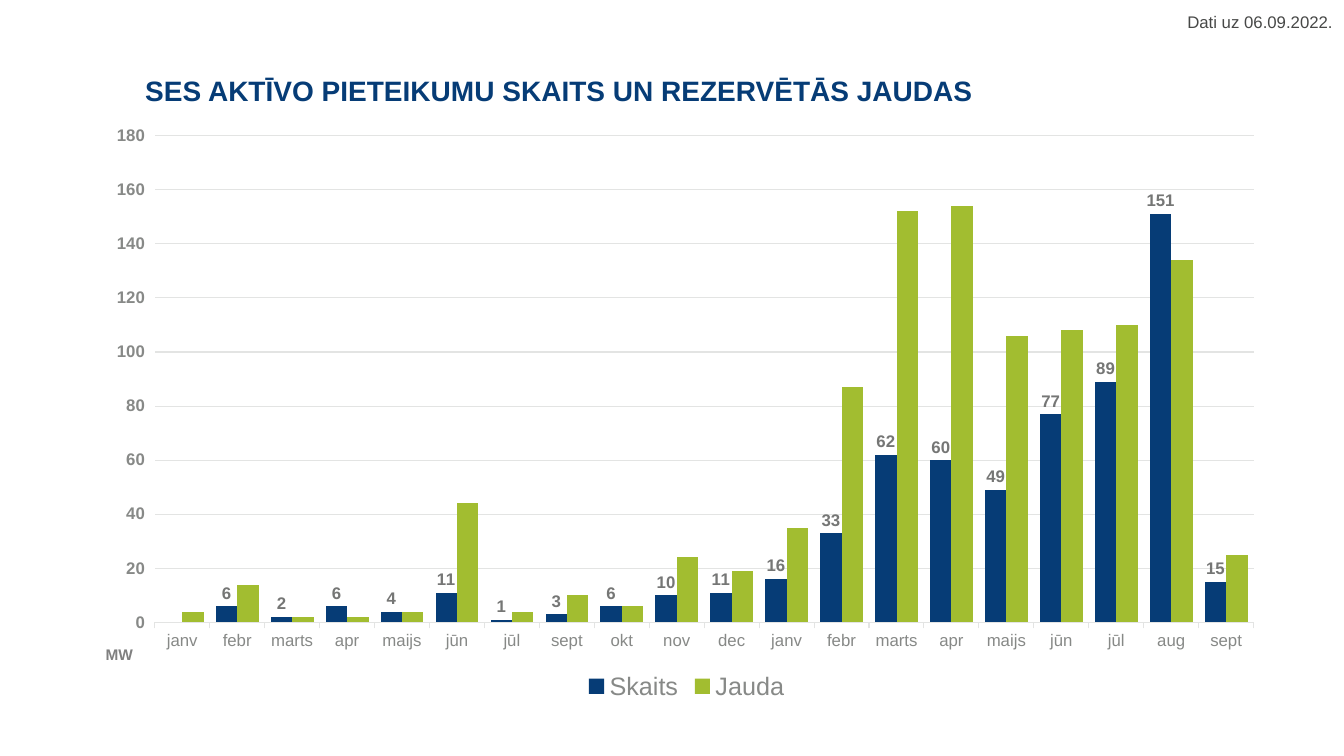
"""Build the slide on active solar applications and reserved capacity."""
from lxml import etree
from pptx import Presentation
from pptx.chart.data import CategoryChartData
from pptx.dml.color import RGBColor
from pptx.enum.chart import XL_CHART_TYPE, XL_LABEL_POSITION, XL_LEGEND_POSITION, XL_TICK_MARK
from pptx.enum.shapes import MSO_SHAPE
from pptx.enum.text import MSO_ANCHOR, MSO_AUTO_SIZE, PP_ALIGN
from pptx.oxml.ns import qn
from pptx.util import Pt

COLUMNS = XL_CHART_TYPE.COLUMN_CLUSTERED
OUTSIDE_END = XL_LABEL_POSITION.OUTSIDE_END
BOTTOM = XL_LEGEND_POSITION.BOTTOM
TICK_OUTSIDE = XL_TICK_MARK.OUTSIDE
RECTANGLE = MSO_SHAPE.RECTANGLE
MIDDLE, TOP = MSO_ANCHOR.MIDDLE, MSO_ANCHOR.TOP
FIT_SHAPE = MSO_AUTO_SIZE.SHAPE_TO_FIT_TEXT
LEFT, JUSTIFY = PP_ALIGN.LEFT, PP_ALIGN.JUSTIFY

NAVY, GREEN, WHITE = "063C76", "A2BD30", "FFFFFF"
DARK, AXIS_GREY, LABEL_GREY, UNIT_GREY, GRID = "474847", "878987", "757675", "808080", "E3E4E3"

MONTHS = ["janv", "febr", "marts", "apr", "maijs", "jūn", "jūl", "sept", "okt", "nov", "dec",
          "janv", "febr", "marts", "apr", "maijs", "jūn", "jūl", "aug", "sept"]
COUNTS = [None, 6, 2, 6, 4, 11, 1, 3, 6, 10, 11, 16, 33, 62, 60, 49, 77, 89, 151, 15]
CAPACITIES = [4, 14, 2, 2, 4, 44, 4, 10, 6, 24, 19, 35, 87, 152, 154, 106, 108, 110, 134, 25]
SERIES = [("Skaits", COUNTS, NAVY), ("Jauda", CAPACITIES, GREEN)]
PLOT_AREA = {"x": 0.05, "y": 0.04, "w": 0.93, "h": 0.82}


def color(hex_string):
    """Return the colour for a hex string."""
    return RGBColor.from_string(hex_string)


class SlideBuilder:
    """Hold the style and the current slide."""

    def __init__(self, slide, font_name):
        """Keep the slide and the name of its font."""
        self.slide = slide
        self.font_name = font_name

    def style_font(self, font, size, hex_string, bold=False):
        """Set name, size, colour and weight of a font."""
        font.name, font.size, font.bold = self.font_name, Pt(size), bold
        font.color.rgb = color(hex_string)

    def fill_text(self, shape, text, size, hex_string, bold=False, align=LEFT, anchor=TOP):
        """Put one formatted paragraph in a shape."""
        frame = shape.text_frame
        frame.text = text
        frame.word_wrap, frame.auto_size = True, FIT_SHAPE
        frame.vertical_anchor = anchor
        paragraph = frame.paragraphs[0]
        paragraph.alignment = align
        self.style_font(paragraph.runs[0].font, size, hex_string, bold)
        return paragraph

    def title(self, text, left, top, width, height):
        """Place and format the title."""
        shape = self.slide.shapes.title
        shape.left, shape.top, shape.width, shape.height = map(Pt, (left, top, width, height))
        self.fill_text(shape, text, 20, NAVY, bold=True, anchor=MIDDLE)

    def unit(self, text, left, top, width, height):
        """Add the unit of the value axis."""
        shape = self.slide.shapes.add_textbox(*map(Pt, (left, top, width, height)))
        paragraph = self.fill_text(shape, text, 11, UNIT_GREY, bold=True, align=JUSTIFY)
        paragraph.line_spacing = Pt(25)

    def date_note(self, text, left, top, width, height):
        """Add the date of the data on a white box."""
        shape = self.slide.shapes.add_shape(RECTANGLE, *map(Pt, (left, top, width, height)))
        shape.shadow.inherit = False
        shape.fill.solid()
        shape.fill.fore_color.rgb = color(WHITE)
        shape.line.fill.background()
        self.fill_text(shape, text, 12, DARK)
        shape.text_frame.word_wrap = False

    def style_line(self, line):
        """Make a chart line thin and pale."""
        line.color.rgb = color(GRID)
        line.width = Pt(0.75)

    def column_chart(self, categories, series_rows, left, top, width, height):
        """Add the clustered column chart."""
        data = CategoryChartData(number_format="0")
        data.categories = categories
        for name, values, _ in series_rows:
            data.add_series(name, values)
        frame = self.slide.shapes.add_chart(COLUMNS, *map(Pt, (left, top, width, height)), data)
        chart = frame.chart
        chart.has_title = False
        self.style_font(chart.font, 10, DARK)
        plot = chart.plots[0]
        plot.gap_width, plot.overlap, plot.vary_by_categories = 57, 0, False
        for series, (_, _, hex_string) in zip(plot.series, series_rows):
            series.format.fill.solid()
            series.format.fill.fore_color.rgb = color(hex_string)
        self.value_labels(plot.series[0])
        self.axes(chart)
        chart.has_legend = True
        chart.legend.position = BOTTOM
        chart.legend.include_in_layout = False
        self.style_font(chart.legend.font, 18, AXIS_GREY)
        self.place_plot(chart)

    def value_labels(self, series):
        """Show bold values above the columns of a series."""
        labels = series.data_labels
        labels.show_value = True
        labels.position = OUTSIDE_END
        labels.number_format, labels.number_format_is_linked = "0", False
        self.style_font(labels.font, 12, LABEL_GREY, bold=True)

    def axes(self, chart):
        """Format both axes and the gridlines."""
        months, values = chart.category_axis, chart.value_axis
        for axis, bold in ((months, False), (values, True)):
            axis.major_tick_mark = TICK_OUTSIDE
            self.style_font(axis.tick_labels.font, 12, AXIS_GREY, bold)
        self.style_line(months.format.line)
        values.format.line.fill.background()
        values.minimum_scale, values.maximum_scale, values.major_unit = 0, 180, 20
        values.has_major_gridlines = True
        self.style_line(values.major_gridlines.format.line)
        values.tick_labels.number_format = "0"
        values.tick_labels.number_format_is_linked = False

    def place_plot(self, chart):
        """Fix the inner plot area as fractions of the chart."""
        plot_area = chart.element.find(".//" + qn("c:plotArea"))
        layout = plot_area.find(qn("c:layout"))
        if layout is None:
            layout = etree.Element(qn("c:layout"))
            plot_area.insert(0, layout)
        manual = etree.SubElement(layout, qn("c:manualLayout"))
        settings = {"layoutTarget": "inner", "xMode": "edge", "yMode": "edge", **PLOT_AREA}
        for name, value in settings.items():
            etree.SubElement(manual, qn("c:" + name)).set("val", str(value))


def main():
    """Build and save the presentation."""
    presentation = Presentation()
    presentation.slide_width, presentation.slide_height = Pt(960), Pt(540)
    slide = presentation.slides.add_slide(presentation.slide_layouts[5])
    builder = SlideBuilder(slide, "Arial")
    builder.column_chart(MONTHS, SERIES, 68.4, 80, 844, 424)
    builder.unit("MW", 68.4, 445.7, 91.4, 28.8)
    builder.title("SES AKTĪVO PIETEIKUMU SKAITS UN REZERVĒTĀS JAUDAS", 96.5, 48.5, 631, 31.5)
    builder.date_note("Dati uz 06.09.2022.", 841, 5, 119, 21.6)
    presentation.save("out.pptx")


if __name__ == "__main__":
    main()
